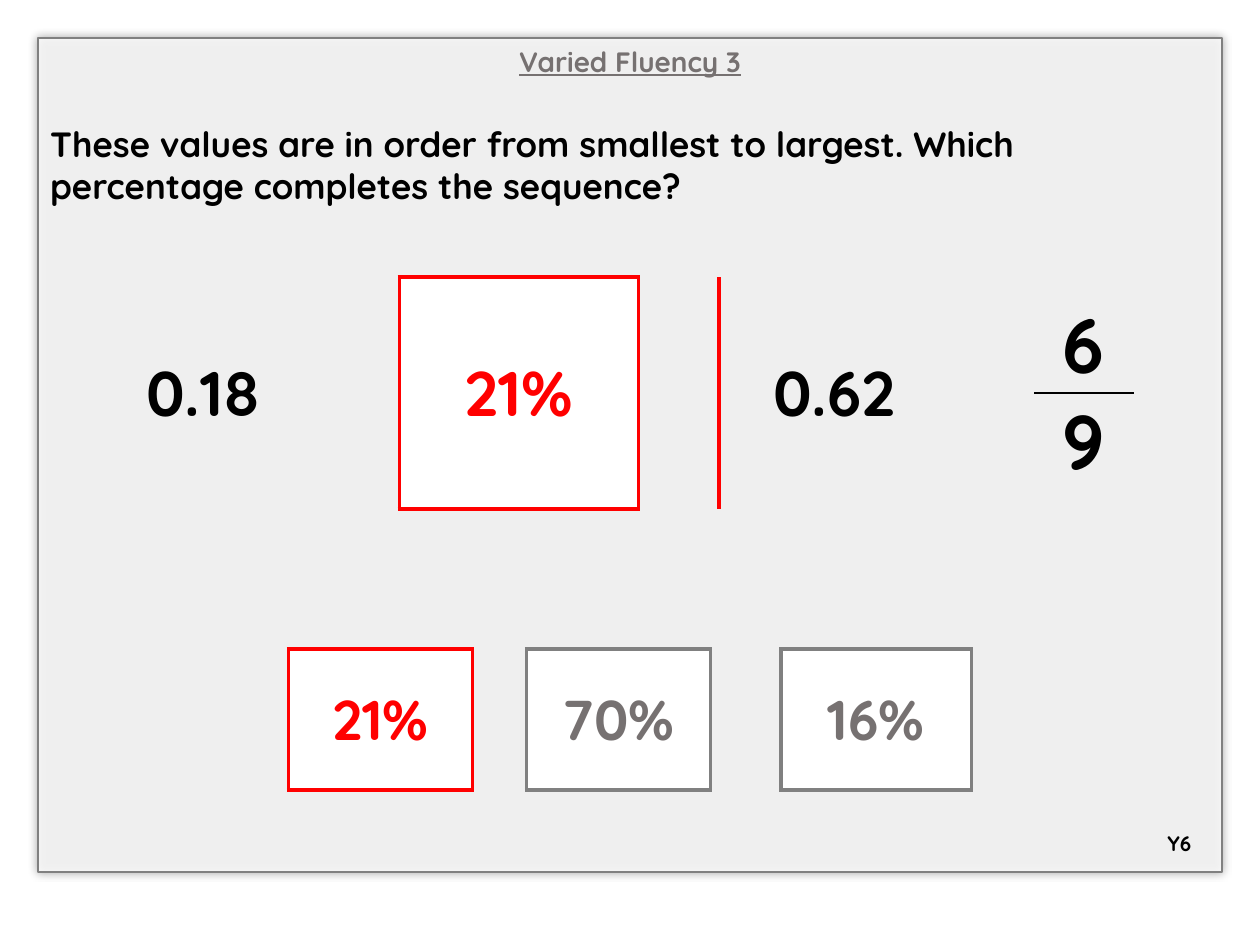
import pptx
import pptx.dml.color
import pptx.enum.shapes
import pptx.enum.text
import pptx.oxml
import pptx.oxml.ns
import pptx.util

Pt = pptx.util.Pt
RGBColor = pptx.dml.color.RGBColor
ALIGN = pptx.enum.text.PP_ALIGN
ANCHOR = pptx.enum.text.MSO_ANCHOR
qn = pptx.oxml.ns.qn
NS = pptx.oxml.ns.nsdecls("a")

WHITE = RGBColor(0xFF, 0xFF, 0xFF)
BLACK = RGBColor(0, 0, 0)
RED = RGBColor(0xFF, 0, 0)
GREY = RGBColor(0x80, 0x80, 0x80)
TEXT_GREY = RGBColor(0x76, 0x71, 0x71)
FONT = "Quicksand"
NO_GRID_STYLE = "{2D5ABB26-0587-4C30-8999-92F81FD0307C}"

HEADING = "Varied Fluency 3"
QUESTION = ("These values are in order from smallest to largest. "
            "Which percentage completes the sequence?")
YEAR = "Y6"
SEQUENCE = [("0.18", BLACK), ("21%", RED), ("0.62", BLACK)]
FRACTION = [("6", ANCHOR.BOTTOM), ("9", ANCHOR.TOP)]
CHOICES = [("21%", RED, RED), ("70%", TEXT_GREY, GREY), ("16%", TEXT_GREY, GREY)]

SEQUENCE_WIDTHS = [131.8, 46, 136.8, 46, 131.8, 48.2, 56.9]
CHOICE_WIDTHS = [105.1, 31, 105.1, 40.3, 108.7]
PANEL = (21.6, 21.6, 676.8, 476.6)


def place(box):
    return [Pt(length) for length in box]


def write(holder, text, size=20, color=BLACK, align=ALIGN.CENTER,
          anchor=ANCHOR.MIDDLE, margins=(7.2, 3.6), underline=False):
    frame = getattr(holder, "text_frame", holder)
    frame.word_wrap = True
    holder.vertical_anchor = anchor
    holder.margin_left = holder.margin_right = Pt(margins[0])
    holder.margin_top = holder.margin_bottom = Pt(margins[1])
    paragraph = frame.paragraphs[0]
    paragraph.alignment = align
    run = paragraph.add_run()
    run.text = text
    run.font.name = FONT
    run.font.size = Pt(size)
    run.font.bold = True
    run.font.underline = underline
    run.font.color.rgb = color


def add_grid(slide, left, top, widths, heights):
    graphic = slide.shapes.add_table(
        len(heights), len(widths), *place((left, top, sum(widths), sum(heights))))
    table = graphic.table
    table.first_row = table.horz_banding = False
    graphic._element.find(".//" + qn("a:tableStyleId")).text = NO_GRID_STYLE
    for column, width in zip(table.columns, widths):
        column.width = Pt(width)
    for row, height in zip(table.rows, heights):
        row.height = Pt(height)
    return table


def border(cell, sides, color, width):
    properties = cell._tc.get_or_add_tcPr()
    for position, side in enumerate(sides):
        properties.insert(position, pptx.oxml.parse_xml(
            f'<a:ln{side} {NS} w="{Pt(width)}"><a:solidFill>'
            f'<a:srgbClr val="{color}"/></a:solidFill></a:ln{side}>'))


def frame_cell(table, column, color):
    cell = table.cell(0, column)
    cell.fill.solid()
    cell.fill.fore_color.rgb = WHITE
    border(cell, "LRTB", color, 2.25)


def frame_neighbours(table, column, color):
    if column > 0:
        border(table.cell(0, column - 1), "R", color, 2.25)
    if column + 1 < len(table.columns):
        border(table.cell(0, column + 1), "L", color, 2.25)


def add_panel(slide):
    panel = slide.shapes.add_shape(
        pptx.enum.shapes.MSO_SHAPE.RECTANGLE, *place(PANEL))
    panel.fill.solid()
    panel.fill.fore_color.rgb = WHITE
    panel.line.color.rgb = GREY
    panel.line.width = Pt(1)
    panel.shadow.inherit = False
    properties = panel._element.spPr
    properties.find(qn("a:solidFill"))[0].append(
        pptx.oxml.parse_xml(f'<a:alpha {NS} val="82000"/>'))
    properties.find(qn("a:effectLst")).append(pptx.oxml.parse_xml(
        f'<a:outerShdw {NS} blurRad="{Pt(5)}" dist="0" dir="0" algn="ctr" '
        'rotWithShape="0"><a:srgbClr val="000000"><a:alpha val="40000"/>'
        '</a:srgbClr></a:outerShdw>'))
    slide.shapes._spTree.insert(2, panel._element)


def add_sequence(slide):
    table = add_grid(slide, 50.4, 158.4, SEQUENCE_WIDTHS, [66.24, 66.24])
    fraction_column = len(SEQUENCE_WIDTHS) - 1
    for column in range(fraction_column):
        table.cell(0, column).merge(table.cell(1, column))
    for index, (value, color) in enumerate(SEQUENCE):
        write(table.cell(0, 2 * index), value, size=36, color=color,
              margins=(7.9, 4.3))
    frame_cell(table, 2, RED)
    frame_neighbours(table, 2, RED)
    for row, (digit, anchor) in enumerate(FRACTION):
        cell = table.cell(row, fraction_column)
        write(cell, digit, size=44, anchor=anchor, margins=(0, 0))
        border(cell, "BT"[row], BLACK, 1)


def add_choices(slide):
    table = add_grid(slide, 164.9, 370.8, CHOICE_WIDTHS, [80.6])
    for index, (value, color, edge) in enumerate(CHOICES):
        write(table.cell(0, 2 * index), value, size=32, color=color, margins=(0, 0))
        frame_cell(table, 2 * index, edge)
        frame_neighbours(table, 2 * index, edge)


def main():
    deck = pptx.Presentation()
    deck.slide_width, deck.slide_height = Pt(720), Pt(540)
    slide = deck.slides.add_slide(deck.slide_layouts[5])

    heading = slide.shapes.title
    left, top, width, _ = PANEL
    heading.left, heading.top, heading.width, heading.height = place(
        (left, top, width, 28))
    write(heading.text_frame, HEADING, size=16, color=TEXT_GREY,
          anchor=ANCHOR.TOP, underline=True)
    add_panel(slide)

    question = slide.shapes.add_textbox(*place((left, 66.6, width, 58)))
    write(question.text_frame, QUESTION, align=ALIGN.LEFT, anchor=ANCHOR.TOP)

    add_sequence(slide)
    add_choices(slide)

    year = slide.shapes.add_textbox(*place((655.9, 470.9, 36, 21.6)))
    write(year.text_frame, YEAR, size=12)

    deck.save("out.pptx")


if __name__ == "__main__":
    main()
